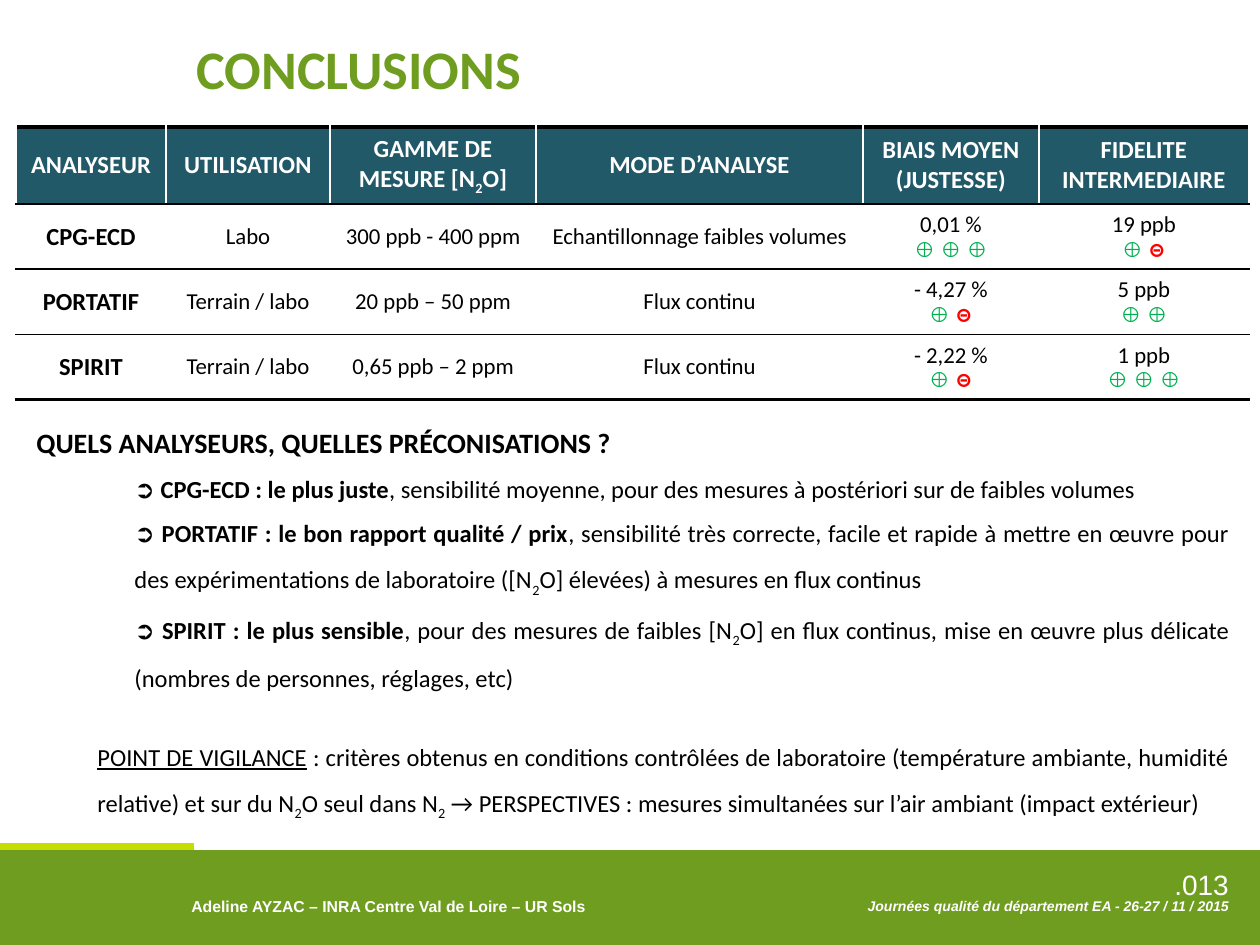
from lxml import etree
from pptx import Presentation
from pptx.dml.color import RGBColor
from pptx.enum.shapes import MSO_SHAPE
from pptx.enum.text import MSO_ANCHOR, PP_ALIGN
from pptx.oxml.ns import qn
from pptx.util import Emu, Pt

RECTANGLE = MSO_SHAPE.RECTANGLE
TOP, MIDDLE = MSO_ANCHOR.TOP, MSO_ANCHOR.MIDDLE
LEFT, CENTER, RIGHT, JUSTIFY = PP_ALIGN.LEFT, PP_ALIGN.CENTER, PP_ALIGN.RIGHT, PP_ALIGN.JUSTIFY

SCALE = 914400 / 126  # EMU per px
WHITE, BLACK, GREEN, LIME, TEAL = "FFFFFF", "000000", "6F9D20", "C5DD01", "215968"
SIGN_COLORS = {"⊕": "00B050", "⊝": "FF0000"}


def px(*lengths):
    return [Emu(round(length * SCALE)) for length in lengths]


def write(paragraph, parts, size, color=BLACK, name="Calibri", bold=False, align=LEFT):
    """Fill a paragraph from (text, style) parts; style is "", "bold", "underline", "sub" or a colour."""
    paragraph.alignment = align
    font = paragraph.font
    font.size, font.name, font.bold = Pt(size), name, bold
    font.color.rgb = RGBColor.from_string(color)
    for text, style in parts:
        run = paragraph.add_run()
        run.text = text
        if style == "bold":
            run.font.bold = True
        elif style == "underline":
            run.font.underline = True
        elif style == "sub":
            run._r.get_or_add_rPr().set("baseline", "-25000")
        elif style:
            run.font.color.rgb = RGBColor.from_string(style)


presentation = Presentation()
presentation.slide_width, presentation.slide_height = px(1260, 945)
slide = presentation.slides.add_slide(presentation.slide_layouts[5])

# Footer band
for box, color in [((0, 850, 1260, 95), GREEN), ((0, 843, 194, 7), LIME)]:
    band = slide.shapes.add_shape(RECTANGLE, *px(*box))
    band.shadow.inherit = False
    band.fill.solid()
    band.fill.fore_color.rgb = RGBColor.from_string(color)
    band.line.fill.background()

footer_texts = [
    (".013", (1086, 861, 155, 34), 16, False, False, RIGHT),
    ("Journées qualité du département EA - 26-27 / 11 / 2015", (748, 891, 494, 30), 8, True, True, RIGHT),
    ("Adeline AYZAC – INRA Centre Val de Loire – UR Sols", (179, 891, 569, 31), 9, True, False, LEFT),
]
for text, box, size, bold, italic, align in footer_texts:
    frame = slide.shapes.add_textbox(*px(*box)).text_frame
    frame.word_wrap = True
    paragraph = frame.paragraphs[0]
    write(paragraph, [(text, "")], size, WHITE, "Arial", bold, align)
    paragraph.font.italic = italic

# Title
title = slide.shapes.title
title.left, title.top, title.width, title.height = px(184, 29, 932, 78)
title.text_frame.vertical_anchor = MIDDLE
write(title.text_frame.paragraphs[0], [("CONCLUSIONS", "")], 31, GREEN, bold=True)

# Comparison table: each cell is a list of lines
header = [
    ["ANALYSEUR"], ["UTILISATION"], ["GAMME DE", "MESURE [N2O]"], ["MODE D’ANALYSE"],
    ["BIAIS MOYEN", "(JUSTESSE)"], ["FIDELITE INTERMEDIAIRE"],
]
analysers = [
    [["CPG-ECD"], ["Labo"], ["300 ppb - 400 ppm"], ["Echantillonnage faibles volumes"],
     ["0,01 %", "⊕ ⊕ ⊕"], ["19 ppb", "⊕ ⊝"]],
    [["PORTATIF"], ["Terrain / labo"], ["20 ppb – 50 ppm"], ["Flux continu"],
     ["- 4,27 %", "⊕ ⊝"], ["5 ppb", "⊕ ⊕"]],
    [["SPIRIT"], ["Terrain / labo"], ["0,65 ppb – 2 ppm"], ["Flux continu"],
     ["- 2,22 %", "⊕ ⊝"], ["1 ppb", "⊕ ⊕ ⊕"]],
]
rows = [header, *analysers]
column_widths = [150, 164, 206, 327, 176, 210]
row_heights = [77, 65, 65, 65]
table = slide.shapes.add_table(
    len(rows), len(column_widths), *px(16, 127, sum(column_widths), sum(row_heights))
).table
table.first_row = table.horz_banding = False
for column, width in zip(table.columns, px(*column_widths)):
    column.width = width
for row, height in zip(table.rows, px(*row_heights)):
    row.height = height

last_row = len(rows) - 1
for row_index, row in enumerate(rows):
    is_header = row_index == 0
    borders = [
        ("lnL", WHITE, 1), ("lnR", WHITE, 1),
        ("lnT", BLACK, 2.25 if is_header else 1),
        ("lnB", BLACK, 2.25 if row_index == last_row else 1),
    ]
    for column_index, lines in enumerate(row):
        cell = table.cell(row_index, column_index)
        cell.vertical_anchor = MIDDLE
        properties = cell._tc.get_or_add_tcPr()
        for tag, color, width in borders:
            line = etree.SubElement(properties, qn("a:" + tag), w=str(Pt(width)))
            fill = etree.SubElement(line, qn("a:solidFill"))
            etree.SubElement(fill, qn("a:srgbClr"), val=color)
        cell.fill.solid()
        cell.fill.fore_color.rgb = RGBColor.from_string(TEAL if is_header else WHITE)

        strong = is_header or column_index == 0
        for line_index, text in enumerate(lines):
            frame = cell.text_frame
            paragraph = frame.add_paragraph() if line_index else frame.paragraphs[0]
            if text[0] in SIGN_COLORS:
                signs = [(sign, SIGN_COLORS.get(sign, "")) for sign in text]
                write(paragraph, signs, 12, name="Times New Roman", bold=True, align=CENTER)
            else:
                before, formula, after = text.partition("N2O")
                parts = [(before, "")]
                if formula:
                    parts = [(before + "N", ""), ("2", "sub"), ("O" + after, "")]
                write(paragraph, parts, 14 if strong else 13, WHITE if is_header else BLACK,
                      bold=strong, align=CENTER)

# Recommendations: left margin in px, size, space before in points, parts
recommendations = [
    (0, 16, 0, [("QUELS ANALYSEURS, QUELLES PRÉCONISATIONS ?", "bold")]),
    (98, 14, 0, [
        ("➲ CPG-ECD : le plus juste", "bold"),
        (", sensibilité moyenne, pour des mesures à postériori sur de faibles volumes", "")]),
    (98, 14, 0, [
        ("➲ PORTATIF : le bon rapport qualité / prix", "bold"),
        (", sensibilité très correcte, facile et rapide à mettre en œuvre pour "
         "des expérimentations de laboratoire ([N", ""),
        ("2", "sub"), ("O] élevées) à mesures en flux continus", "")]),
    (98, 14, 0, [
        ("➲ SPIRIT : le plus sensible", "bold"),
        (", pour des mesures de faibles [N", ""), ("2", "sub"),
        ("O] en flux continus, mise en œuvre plus délicate "
         "(nombres de personnes, réglages, etc)", "")]),
    (61, 14, 20, [
        ("POINT DE VIGILANCE", "underline"),
        (" : critères obtenus en conditions contrôlées de laboratoire "
         "(température ambiante, humidité relative) et sur du N", ""),
        ("2", "sub"), ("O seul dans N", ""), ("2", "sub"),
        (" → PERSPECTIVES : mesures simultanées sur l’air ambiant (impact extérieur)", "")]),
]
frame = slide.shapes.add_textbox(*px(24, 403, 1218, 430)).text_frame
frame.word_wrap = True
frame.vertical_anchor = TOP
for index, (margin, size, space_before, parts) in enumerate(recommendations):
    paragraph = frame.add_paragraph() if index else frame.paragraphs[0]
    paragraph.line_spacing = 1.5
    paragraph.space_before = Pt(space_before)
    paragraph._p.get_or_add_pPr().set("marL", str(px(margin)[0]))
    write(paragraph, parts, size, align=JUSTIFY)

presentation.save("out.pptx")
